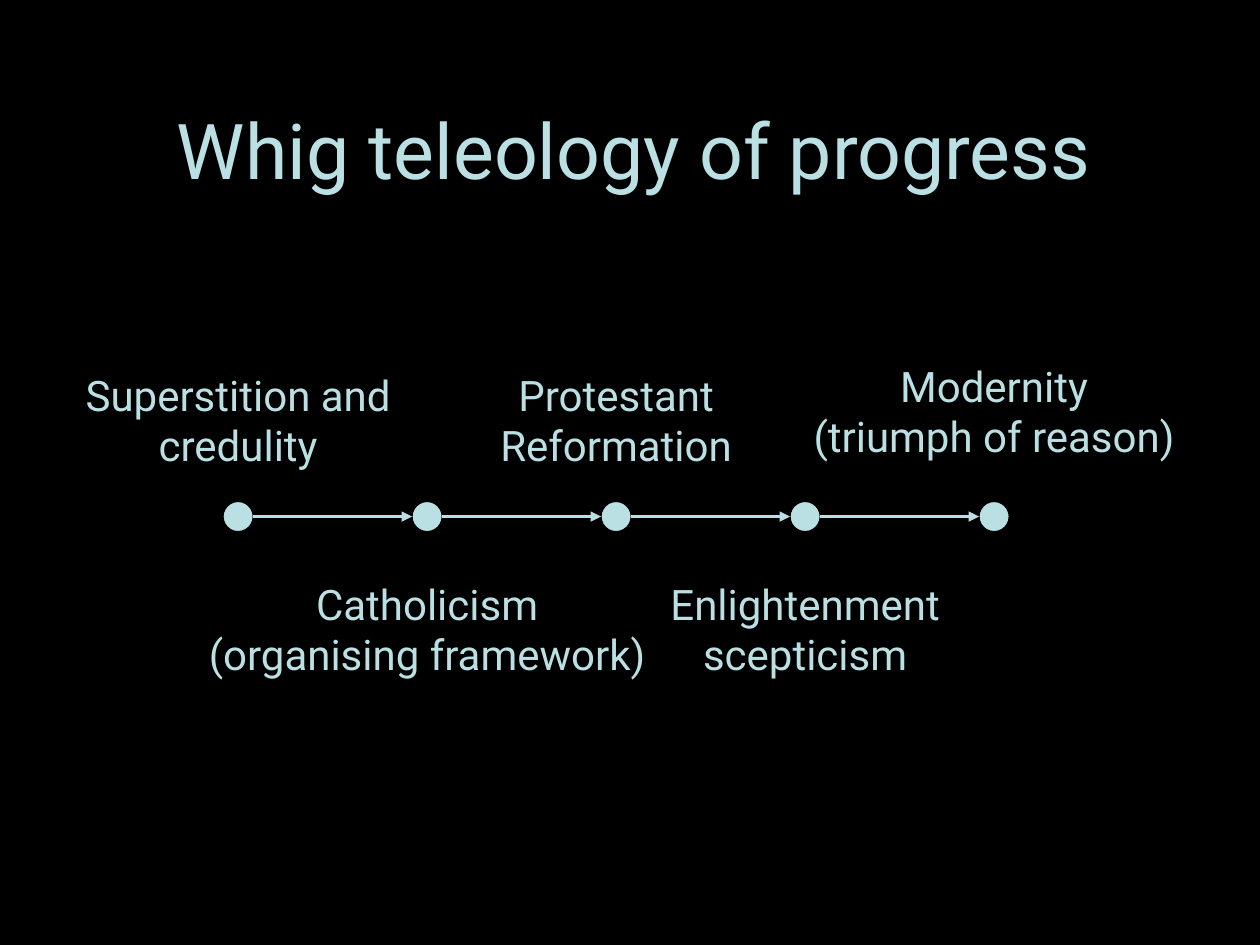
from pptx import Presentation, util as u
from pptx.dml import color
from pptx.enum import shapes, text
from pptx.oxml import ns
from lxml import etree


def rgb(code):
    return color.RGBColor.from_string(code)


class Deck:
    font = "Roboto"
    ink = "BBE0E3"
    ground = "000000"

    def __init__(self, slide):
        self.slide = slide
        fill = slide.background.fill
        fill.solid()
        fill.fore_color.rgb = rgb(self.ground)

    def words(self, box, lines, size):
        frame = box.text_frame
        frame.word_wrap = True
        frame.auto_size = text.MSO_AUTO_SIZE.SHAPE_TO_FIT_TEXT
        frame.vertical_anchor = text.MSO_ANCHOR.TOP
        for i, line in enumerate(lines):
            para = frame.add_paragraph() if i else frame.paragraphs[0]
            para.alignment = text.PP_ALIGN.CENTER
            run = para.add_run()
            run.text = line
            run.font.name = self.font
            run.font.size = u.Pt(size)
            run.font.color.rgb = rgb(self.ink)

    def title(self, line, left, top, width, height):
        box = self.slide.shapes.title
        box.left, box.top = u.Inches(left), u.Inches(top)
        box.width, box.height = u.Inches(width), u.Inches(height)
        self.words(box, [line], 44)

    def label(self, lines, mid, top, width):
        box = self.slide.shapes.add_textbox(
            u.Inches(mid - width / 2), u.Inches(top), u.Inches(width), u.Inches(0.9))
        self.words(box, lines, 24)

    def dot(self, x, y, size):
        dot = self.slide.shapes.add_shape(
            shapes.MSO_SHAPE.OVAL, u.Inches(x - size / 2), u.Inches(y - size / 2),
            u.Inches(size), u.Inches(size))
        dot.shadow.inherit = False
        dot.fill.solid()
        dot.fill.fore_color.rgb = rgb(self.ink)
        dot.line.color.rgb = rgb(self.ground)
        dot.line.width = u.Pt(0.75)

    def arrow(self, start, end, y):
        link = self.slide.shapes.add_connector(
            shapes.MSO_CONNECTOR.STRAIGHT, u.Inches(start), u.Inches(y),
            u.Inches(end), u.Inches(y))
        link.line.color.rgb = rgb(self.ink)
        link.line.width = u.Pt(1.5)
        props = link._element.spPr
        etree.SubElement(props.find(ns.qn("a:ln")), ns.qn("a:tailEnd"), type="triangle")
        etree.SubElement(props, ns.qn("a:effectLst"))


def main():
    prs = Presentation()
    prs.slide_width, prs.slide_height = u.Inches(10), u.Inches(7.5)
    deck = Deck(prs.slides.add_slide(prs.slide_layouts[5]))
    deck.title("Whig teleology of progress", 0.98, 0.76, 8.11, 0.83)

    first, step, axis, size = 1.89, 1.5, 4.1, 0.24
    above, below = 2.88, 4.54
    stages = [
        (["Superstition and credulity"], above, 2.91),
        (["Catholicism", "(organising framework)"], below, 4.02),
        (["Protestant Reformation"], above, 2.91),
        (["Enlightenment scepticism"], below, 2.91),
        (["Modernity", "(triumph of reason)"], 2.81, 3.46),
    ]
    for i, (lines, top, width) in enumerate(stages):
        mid = first + i * step
        deck.dot(mid, axis, size)
        deck.label(lines, mid, top, width)
        if i:
            deck.arrow(mid - step + size / 2, mid - size / 2, axis)

    prs.save("out.pptx")


if __name__ == "__main__":
    main()
